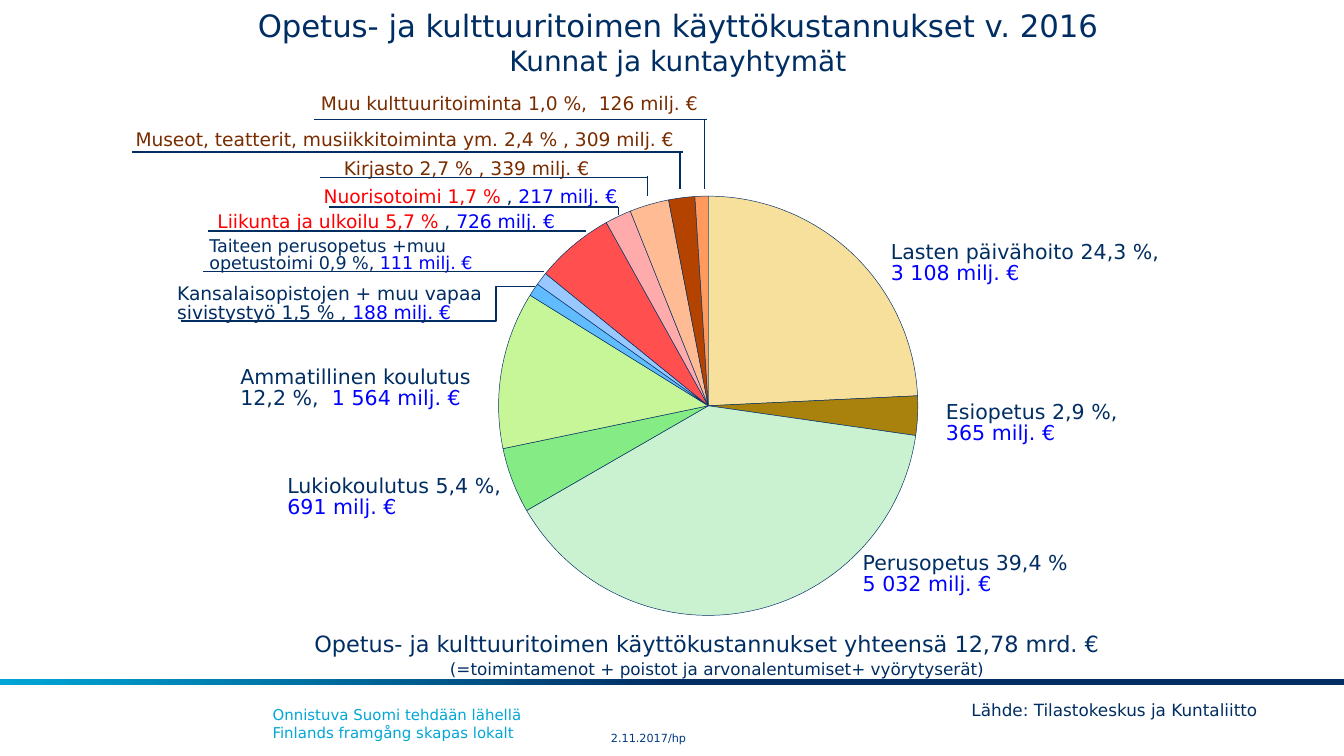
from lxml import etree
from pptx import Presentation
from pptx.chart.data import CategoryChartData as Data
from pptx.dml.color import RGBColor as RGB
from pptx.enum.chart import XL_CHART_TYPE as Chart
from pptx.enum.shapes import MSO_CONNECTOR as Link, MSO_SHAPE as Shape
from pptx.enum.text import MSO_ANCHOR as Anchor, MSO_AUTO_SIZE as Auto, PP_ALIGN as Align
from pptx.oxml import parse_xml
from pptx.oxml.ns import nsdecls, qn
from pptx.util import Inches, Pt

NAVY, BLUE, RED, BROWN, CYAN = "002E63", "0000FF", "FF0000", "792C00", "00A6D6"
SLICES = [
    (24, "F7E09C"), (3, "A8820D"), (39, "CAF2D1"), (5, "85EB85"),
    (12, "C7F698"), (1, "61BBFF"), (1, "98C8FF"), (6, "FF4F4F"),
    (2, "FFABAB"), (3, "FFBB94"), (2, "B54300"), (1, "FF995E"),
]
# place, size, lines of (text, colour) runs
LABELS = [
    ((1.69, 2.69, 1.94, 0.42), 11,
     [[("Ammatillinen koulutus", NAVY)], [("12,2 %,  ", NAVY), ("1 564 milj. €", BLUE)]]),
    ((2.29, 0.66, 3.13, 0.24), 10,
     [[("Muu kulttuuritoiminta 1,0 %,  126 milj. €", BROWN)]]),
    ((6.32, 4.07, 1.78, 0.42), 11,
     [[("Perusopetus 39,4 %", NAVY)], [("5 032 milj. €", BLUE)]]),
    ((0.91, 0.93, 4.45, 0.24), 10,
     [[("Museot, teatterit, musiikkitoiminta ym. 2,4 % , 309 milj. €", BROWN)]]),
    ((1.22, 2.07, 2.51, 0.39), 10,
     [[("Kansalaisopistojen + muu vapaa", NAVY)],
      [("sivistystyö 1,5 % , ", NAVY), ("188 milj. €", BLUE)]]),
    ((1.46, 1.72, 2.26, 0.37), 9.4,
     [[("Taiteen perusopetus +muu", NAVY)],
      [("opetustoimi 0,9 %, ", NAVY), ("111 milj. €", BLUE)]]),
    ((2.46, 1.14, 2.14, 0.24), 10, [[("Kirjasto 2,7 % , 339 milj. €", BROWN)]]),
    ((1.52, 1.54, 2.94, 0.24), 10,
     [[("Liikunta ja ulkoilu 5,7 % ", RED), (", ", NAVY), ("726 milj. €", BLUE)]]),
    ((2.31, 1.35, 2.58, 0.24), 10,
     [[("Nuorisotoimi 1,7 % ", RED), (", ", NAVY), ("217 milj. €", BLUE)]]),
    ((6.53, 1.76, 2.31, 0.42), 11,
     [[("Lasten päivähoito 24,3 %,", NAVY)], [("3 108 milj. €", BLUE)]]),
    ((2.04, 3.5, 1.86, 0.42), 11,
     [[("Lukiokoulutus 5,4 %,", NAVY)], [("691 milj. €", BLUE)]]),
    ((6.94, 2.95, 1.58, 0.42), 11,
     [[("Esiopetus 2,9 %,", NAVY)], [("365 milj. €", BLUE)]]),
]
LEADERS = [
    (2.34, 0.89, 5.26, 0.89), (5.24, 0.89, 5.24, 1.41),
    (0.98, 1.13, 5.08, 1.13), (5.06, 1.14, 5.06, 1.41),
    (2.38, 1.32, 4.82, 1.32), (4.82, 1.31, 4.82, 1.46),
    (2.45, 1.54, 4.6, 1.54), (4.6, 1.54, 4.6, 1.6),
    (1.55, 1.72, 4.36, 1.72), (1.51, 2.02, 4.05, 2.02),
]


def color(code):
    return RGB.from_string(code)


def assign(target, values):
    """Set each attribute named in a dict."""
    for name, value in values.items():
        setattr(target, name, value)


class Painter:
    font = "DejaVu Sans"

    def __init__(self, slide):
        self.slide = slide
        self.shapes = slide.shapes

    def text(self, box, size, lines, frame=None, para=None, inset=True):
        """Add lines of (text, colour) runs; return the paragraphs."""
        body = self.shapes.add_textbox(*map(Inches, box)).text_frame
        look = {"word_wrap": False, "auto_size": Auto.SHAPE_TO_FIT_TEXT}
        if not inset:
            sides = ("left", "top", "right", "bottom")
            look.update({f"margin_{side}": 0 for side in sides})
        assign(body, look | (frame or {}))
        for i, line in enumerate(lines):
            row = body.add_paragraph() if i else body.paragraphs[0]
            assign(row, para or {})
            for words, code in line:
                for j, part in enumerate(words.split("\n")):
                    if j:
                        row.add_line_break()
                    run = row.add_run()
                    run.text = part
                    assign(run.font, {"name": self.font, "size": Pt(size)})
                    run.font.color.rgb = color(code)
        return body.paragraphs

    def band(self, box, stops, angle):
        bar = self.shapes.add_shape(Shape.RECTANGLE, *map(Inches, box))
        bar.shadow.inherit = False
        bar.line.fill.background()
        bar.fill.gradient()
        bar.fill.gradient_angle = angle
        for stop, (place, code) in zip(bar.fill.gradient_stops, stops):
            stop.position = place
            stop.color.rgb = color(code)

    def line(self, ends, bend=None):
        """Draw a leader, with its elbow at the share given by bend."""
        kind = Link.STRAIGHT if bend is None else Link.ELBOW
        link = self.shapes.add_connector(kind, *map(Inches, ends))
        link.line.width = Pt(0.75)
        link.line.color.rgb = color(NAVY)
        props = link._element.spPr
        etree.SubElement(props, qn("a:effectLst"))
        if bend is not None:
            guides = props.find(qn("a:prstGeom")).find(qn("a:avLst"))
            etree.SubElement(guides, qn("a:gd"), name="adj1",
                             fmla=f"val {round(bend * 100000)}")

    def pie(self, box, slices, inner):
        """Draw a pie whose plot fills the inner box, in inches."""
        data = Data()
        data.categories = [str(i + 1) for i in range(len(slices))]
        data.add_series("Series 1", [share for share, _ in slices])
        chart = self.shapes.add_chart(Chart.PIE, *map(Inches, box), data).chart
        assign(chart, {"has_legend": False, "has_title": False})
        assign(chart.font, {"name": "Times New Roman", "size": Pt(17.8), "bold": True})
        chart.font.color.rgb = color(NAVY)
        plot = chart.plots[0]
        plot.vary_by_categories = True
        for i, (_, code) in enumerate(slices):
            form = plot.series[0].points[i].format
            form.fill.solid()
            form.fill.fore_color.rgb = color(code)
            form.line.width = Pt(0.25)
            form.line.color.rgb = color(NAVY)
        area = chart._chartSpace.chart.plotArea
        for old in area.findall(qn("c:layout")):
            area.remove(old)
        modes = '<c:layoutTarget val="inner"/><c:xMode val="edge"/><c:yMode val="edge"/>'
        sizes = "".join(f'<c:{k} val="{part / full}"/>'
                        for k, part, full in zip("xywh", inner, box[2:] * 2))
        area.insert(0, parse_xml(
            f'<c:layout {nsdecls("c")}><c:manualLayout>{modes}{sizes}'
            "</c:manualLayout></c:layout>"))


def main():
    deck = Presentation()
    wide = Inches(10)
    assign(deck, {"slide_width": wide, "slide_height": wide * 9 // 16})
    art = Painter(deck.slides.add_slide(deck.slide_layouts[6]))

    art.band((0, 5.05, 10, 0.05), [(0.5, NAVY), (1, CYAN)], 180)
    art.text((1.93, 5.2, 6.54, 0.37), 8,
             [[("Onnistuva Suomi tehdään lähellä\nFinlands framgång skapas lokalt", CYAN)]],
             {"word_wrap": True})
    center = {"alignment": Align.CENTER}
    art.text((4.1, 5.36, 1.45, 0.27), 6, [[("2.11.2017/hp", "003882")]],
             {"word_wrap": True, "auto_size": Auto.NONE,
              "vertical_anchor": Anchor.MIDDLE}, center, inset=False)
    title = art.text((1.76, 0.05, 6.57, 0.53), 16.5,
                     [[("Opetus- ja kulttuuritoimen käyttökustannukset v. 2016", NAVY)],
                      [("Kunnat ja kuntayhtymät", NAVY)]], para=center, inset=False)
    title[1].runs[0].font.size = Pt(15)

    art.pie((2.92, 1.29, 4.92, 3.7), SLICES, (0.79, 0.17, 3.12, 3.12))
    for box, size, lines in LABELS:
        art.text(box, size, lines, para={"line_spacing": 0.85})
    for ends in LEADERS:
        art.line(ends)
    art.line((3.98, 2.13, 1.35, 2.39), bend=0.11)

    total = art.text(
        (2.24, 4.62, 6.3, 0.49), 12,
        [[("Opetus- ja kulttuuritoimen käyttökustannukset yhteensä 12,78 mrd. €", NAVY)],
         [("(=toimintamenot + poistot ja arvonalentumiset+ vyörytyserät)", NAVY)]],
        para={"line_spacing": 1.1})
    total[1].runs[0].font.size = Pt(9)
    total[1]._p.get_or_add_pPr().set("marL", str(Inches(1.01)))
    art.text((7.13, 5.16, 2.52, 0.25), 9,
             [[("Lähde: Tilastokeskus ja Kuntaliitto", NAVY)]], {"word_wrap": True})
    deck.save("out.pptx")


if __name__ == "__main__":
    main()
